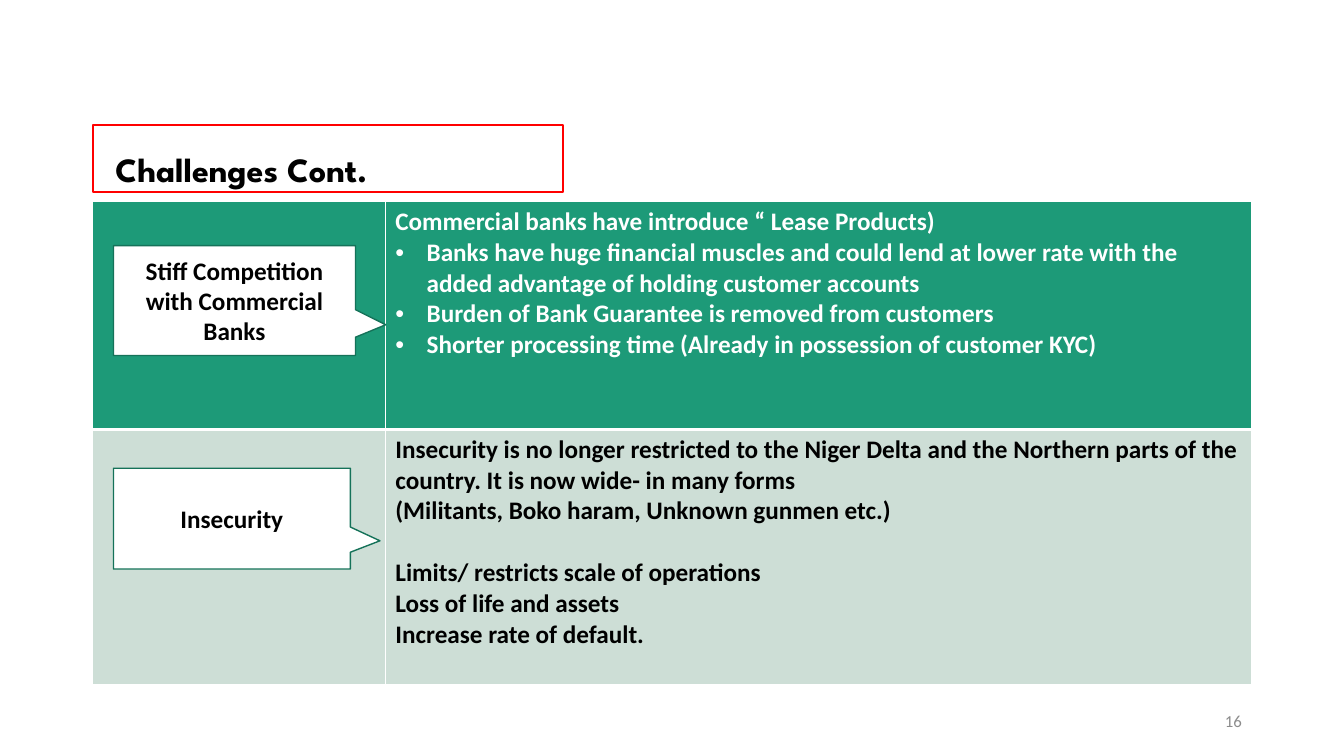
from lxml.etree import SubElement
from pptx import Presentation
from pptx.dml.color import RGBColor
from pptx.enum.shapes import MSO_SHAPE as Shape
from pptx.enum.text import MSO_ANCHOR as Anchor, MSO_AUTO_SIZE as AutoSize, PP_ALIGN as Align
from pptx.oxml.ns import qn
from pptx.util import Cm, Pt

COLORS = {
    "white": "FFFFFF",
    "black": "000000",
    "red": "FF0000",
    "green": "1D9A78",
    "mint": "CDDED6",
    "dark_green": "157259",
    "gray": "8C8C8C",
}

COMPETITION = [
    ("Commercial banks have introduce “ Lease Products)", False, 0),
    ("Banks have huge financial muscles and could lend at lower rate with the "
     "added advantage of holding customer accounts", True, 0),
    ("Burden of Bank Guarantee is removed from customers", True, 0),
    ("Shorter processing time (Already in possession of customer KYC)", True, 0),
]
INSECURITY = [
    ("Insecurity is no longer restricted to the Niger Delta and the Northern parts "
     "of the country. It is now wide- in many forms", False, 0),
    ("(Militants, Boko haram, Unknown gunmen etc.)", False, 0),
    ("Limits/ restricts scale of operations", False, 22),
    ("Loss of life and assets", False, 0),
    ("Increase rate of default.", False, 0),
]


def rgb(name):
    return RGBColor.from_string(COLORS[name])


class PageBuilder:
    font = "Calibri"
    size = 18

    def __init__(self, page):
        self.page = page

    def style(self, para, color, size=size, font=font, bold=True, align=Align.LEFT):
        para.alignment = align
        para.font.name = font
        para.font.size = Pt(size)
        para.font.bold = bold
        para.font.color.rgb = rgb(color)

    def paint(self, shape, line, width):
        shape.fill.solid()
        shape.fill.fore_color.rgb = rgb("white")
        shape.line.color.rgb = rgb(line)
        shape.line.width = Pt(width)

    def title(self, text, left, top, width, height):
        title = self.page.shapes.title
        title.left, title.top, title.width, title.height = map(Cm, (left, top, width, height))
        self.paint(title, "red", 1.5)
        frame = title.text_frame
        frame.auto_size = AutoSize.NONE
        frame.vertical_anchor = Anchor.MIDDLE
        frame.margin_left, frame.margin_top = Cm(0.57), Cm(0.68)
        frame.margin_bottom = Cm(0.13)
        frame.text = text
        self.style(frame.paragraphs[0], "black", 24.3, "League Spartan")

    def bullet(self, para):
        props = para._p.get_or_add_pPr()
        props.set("marL", str(Cm(0.79)))
        props.set("indent", str(-Cm(0.79)))
        SubElement(props, qn("a:buFont"), typeface="Arial")
        SubElement(props, qn("a:buChar"), char="•")

    def cell(self, cell, fill, color, lines, borders):
        props = cell._tc.get_or_add_tcPr()
        for side, width in borders.items():
            line = SubElement(props, qn(f"a:{side}"), w=str(Pt(width)))
            paint = SubElement(line, qn("a:solidFill"))
            SubElement(paint, qn("a:srgbClr"), val=COLORS["white"])
        cell.fill.solid()
        cell.fill.fore_color.rgb = rgb(fill)
        frame = cell.text_frame
        for index, (text, bulleted, gap) in enumerate(lines):
            para = frame.add_paragraph() if index else frame.paragraphs[0]
            para.text = text
            self.style(para, color)
            if gap:
                para.space_before = Pt(gap)
            if bulleted:
                self.bullet(para)

    def table(self, left, top, widths, heights, rows):
        table = self.page.shapes.add_table(
            len(heights), len(widths), Cm(left), Cm(top),
            Cm(sum(widths)), Cm(sum(heights))).table
        for column, width in zip(table.columns, widths):
            column.width = Cm(width)
        for index, (fill, color, lines) in enumerate(rows):
            table.rows[index].height = Cm(heights[index])
            borders = {"lnL": 1, "lnR": 1, "lnT": 3 if index else 1, "lnB": 1 if index else 3}
            self.cell(table.cell(index, 0), fill, color, [], borders)
            self.cell(table.cell(index, 1), fill, color, lines, borders)

    def callout(self, text, left, top, width, height):
        callout = self.page.shapes.add_shape(
            Shape.RECTANGULAR_CALLOUT, Cm(left), Cm(top), Cm(width), Cm(height))
        callout.shadow.inherit = False
        callout.adjustments[0], callout.adjustments[1] = 0.625, 0.22
        self.paint(callout, "dark_green", 1)
        frame = callout.text_frame
        frame.word_wrap = True
        frame.vertical_anchor = Anchor.MIDDLE
        frame.text = text
        self.style(frame.paragraphs[0], "black", align=Align.CENTER)

    def page_number(self, text, left, top, width, height):
        box = self.page.shapes.add_textbox(Cm(left), Cm(top), Cm(width), Cm(height))
        frame = box.text_frame
        frame.word_wrap = True
        frame.vertical_anchor = Anchor.MIDDLE
        frame.text = text
        self.style(frame.paragraphs[0], "gray", 12, bold=False, align=Align.RIGHT)


def main():
    deck = Presentation()
    deck.slide_width, deck.slide_height = Cm(33.87), Cm(19.05)
    builder = PageBuilder(deck.slides.add_slide(deck.slide_layouts[5]))
    builder.title("Challenges Cont.", 2.34, 3.15, 11.84, 1.68)
    builder.table(2.34, 5.08, [7.37, 21.84], [5.74, 6.43], [
        ("green", "white", COMPETITION),
        ("mint", "black", INSECURITY),
    ])
    builder.page_number("16", 23.93, 17.65, 7.62, 1.02)
    builder.callout("Stiff Competition with Commercial Banks", 2.86, 6.19, 6.1, 2.77)
    builder.callout("Insecurity", 2.86, 11.8, 5.97, 2.54)
    deck.save("out.pptx")


if __name__ == "__main__":
    main()
